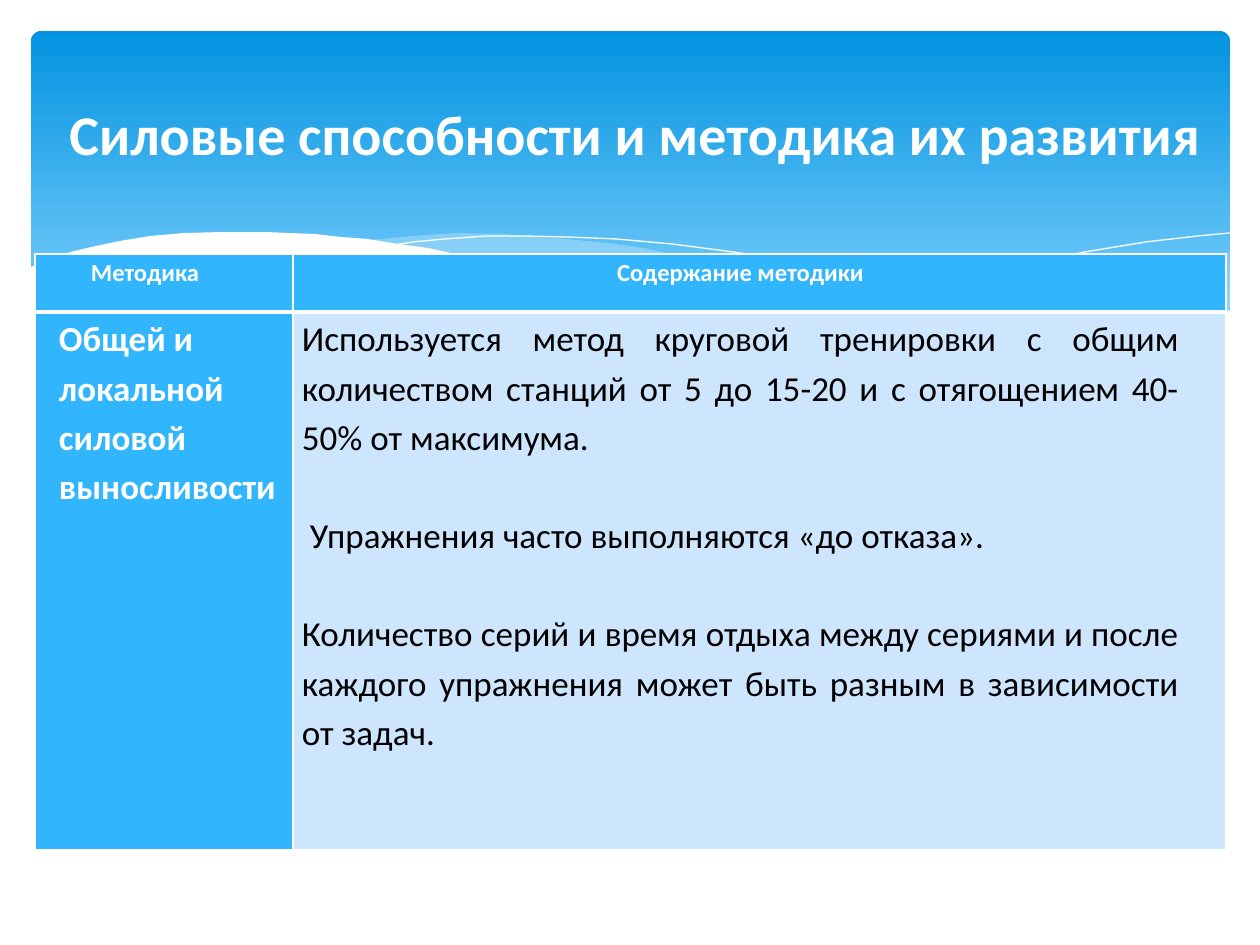
"""Builds a slide on strength endurance training: a blue wave banner, a title and a method table."""
from lxml import etree
from pptx import Presentation
from pptx.dml.color import RGBColor
from pptx.enum.shapes import MSO_SHAPE
from pptx.enum.text import MSO_ANCHOR, MSO_AUTO_SIZE, PP_ALIGN
from pptx.oxml.ns import qn
from pptx.util import Inches, Pt

SCALE = 914400 / 126
FONT = "Calibri"
ROUNDED = MSO_SHAPE.ROUNDED_RECTANGLE
LEFT, CENTER, JUSTIFY = PP_ALIGN.LEFT, PP_ALIGN.CENTER, PP_ALIGN.JUSTIFY
MIDDLE = MSO_ANCHOR.MIDDLE
NO_FIT = MSO_AUTO_SIZE.NONE
COLORS = {
    "banner_top": "0293E0", "banner_low": "83D3FE", "mist": "C6E7FC",
    "white": "FFFFFF", "black": "000000", "accent": "31B6FD", "pale": "CEE5FE",
}


def px(length):
    return round(length * SCALE)


def style(para, size, color, bold, align):
    para.alignment = align
    for span in para.runs:
        span.font.name = FONT
        span.font.size = Pt(size)
        span.font.bold = bold
        span.font.color.rgb = RGBColor.from_string(COLORS[color])


deck = Presentation()
deck.slide_width, deck.slide_height = Inches(10), Inches(7.5)
page = deck.slides.add_slide(deck.slide_layouts[5])

banner = page.shapes.add_shape(ROUNDED, px(31), px(31), px(1199), px(340))
banner.adjustments[0] = 0.03
banner.shadow.inherit = False
banner.line.fill.background()
banner.fill.gradient()
banner.fill.gradient_angle = 270
for stop, position, color in zip(banner.fill.gradient_stops, (0, 0.9), ("banner_top", "banner_low")):
    stop.position = position
    stop.color.rgb = RGBColor.from_string(COLORS[color])

right_wave = [
    (1230, 252), (1194, 257), (1142, 268), (1085, 281), (1014, 298), (949, 312), (833, 334),
    (905, 344), (969, 349), (1026, 350), (1086, 348), (1141, 339), (1187, 326), (1230, 311),
]
middle_wave = [
    (1125, 344), (1055, 334), (977, 320), (890, 302), (793, 280), (753, 270), (717, 262),
    (682, 256), (648, 249), (616, 244), (557, 238), (503, 234), (455, 233), (413, 236),
    (360, 241), (407, 247), (456, 256), (509, 266), (566, 280), (668, 302), (757, 321),
    (838, 335), (910, 345), (989, 350), (1056, 350),
]
middle_line = [
    (389, 246), (413, 242), (445, 239), (487, 236), (524, 236), (567, 237), (616, 239),
    (672, 244), (733, 252), (801, 262), (876, 276), (958, 292), (1047, 316), (1143, 343),
]
right_line = [
    (772, 324), (823, 310), (876, 296), (942, 281), (1015, 265), (1091, 251), (1146, 242),
    (1198, 236), (1230, 233),
]
white_wave = [
    (1231, 310), (1172, 330), (1102, 344), (1019, 349), (915, 343), (816, 330), (699, 309),
    (634, 294), (563, 277), (527, 268), (493, 261), (460, 255), (428, 248), (398, 244),
    (368, 239), (341, 237), (315, 234), (290, 233), (266, 232), (223, 232), (184, 233),
    (150, 236), (120, 241), (96, 246), (74, 251), (58, 256), (45, 261), (29, 268),
    (29, 415), (1231, 415),
]
waves = [
    (right_wave, "mist", 29), (middle_wave, "mist", 40), (middle_line, None, 100),
    (right_line, None, 100), (white_wave, "white", 100),
]
for points, color, opacity in waves:
    builder = page.shapes.build_freeform(*points[0], scale=SCALE)
    builder.add_line_segments(points[1:], close=color is not None)
    wave = builder.convert_to_shape()
    wave.shadow.inherit = False
    if color is None:
        wave.fill.background()
        wave.line.color.rgb = RGBColor.from_string(COLORS["white"])
        wave.line.width = Pt(0)
        continue
    wave.line.fill.background()
    wave.fill.solid()
    wave.fill.fore_color.rgb = RGBColor.from_string(COLORS[color])
    if opacity < 100:
        tint = wave.fill._xPr.find(qn("a:solidFill"))[0]
        etree.SubElement(tint, qn("a:alpha"), val=str(opacity * 1000))

columns, rows = (258, 933), (58, 538)
frame = page.shapes.add_table(2, 2, px(35), px(254), px(sum(columns)), px(sum(rows)))
table = frame.table
for column, width in zip(table.columns, columns):
    column.width = px(width)
for row, height in zip(table.rows, rows):
    row.height = px(height)

contents = [
    (0, 0, "accent", 14, "white", True, CENTER, ["Методика"]),
    (0, 1, "accent", 14, "white", True, CENTER, ["Содержание методики"]),
    (1, 0, "accent", 20, "white", True, LEFT, ["Общей и локальной силовой выносливости"]),
    (1, 1, "pale", 20, "black", False, JUSTIFY, [
        "Используется метод круговой тренировки с общим количеством станций "
        "от 5 до 15-20 и с отягощением 40-50% от максимума.",
        "Упражнения часто выполняются «до отказа».",
        "Количество серий и время отдыха между сериями и после каждого упражнения "
        "может быть разным в зависимости от задач.",
    ]),
]
for row, column, fill, size, color, bold, align, lines in contents:
    cell = table.cell(row, column)
    cell.margin_left = cell.margin_right = px(9)
    cell.margin_top = cell.margin_bottom = 0
    borders = {"lnL": 1, "lnR": 1, "lnT": 1, "lnB": 3} if row == 0 else {"lnL": 1, "lnR": 1, "lnB": 1}
    for side, width in borders.items():
        border = etree.SubElement(cell._tc.get_or_add_tcPr(), qn(f"a:{side}"), w=str(Pt(width)))
        paint = etree.SubElement(border, qn("a:solidFill"))
        etree.SubElement(paint, qn("a:srgbClr"), val=COLORS["white"])
    cell.fill.solid()
    cell.fill.fore_color.rgb = RGBColor.from_string(COLORS[fill])
    cell.text_frame.text = "\n".join(lines)
    for index, para in enumerate(cell.text_frame.paragraphs):
        style(para, size, color, bold, align)
        para.line_spacing = 1.15
        para.space_before = Pt(28 if index else 0)
        indent = 15 if (row, column) == (1, 0) else 8 if index == 1 else 0
        para._p.get_or_add_pPr().set("marL", str(px(indent)))
        if align != LEFT:
            para._p.get_or_add_pPr().set("marR", str(px(38)))

title = page.shapes.title
title.left, title.top, title.width, title.height = px(35), px(47), px(1201), px(173)
title.text_frame.text = "Силовые способности и методика их развития"
title.text_frame.word_wrap = True
title.text_frame.auto_size = NO_FIT
title.text_frame.vertical_anchor = MIDDLE
style(title.text_frame.paragraphs[0], 32, "white", True, CENTER)
page.shapes._spTree.append(title._element)

deck.save("out.pptx")
